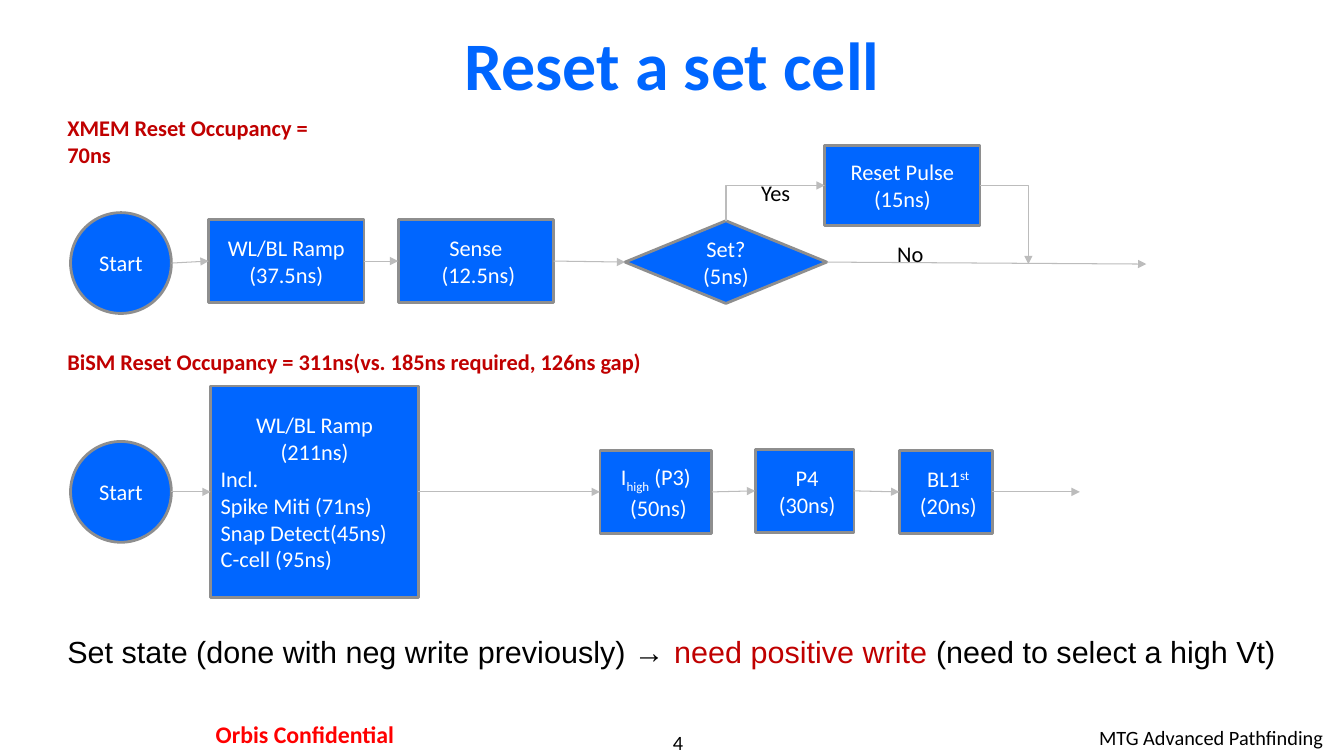
import dataclasses
import typing

import lxml.etree
import pptx
import pptx.dml.color
import pptx.enum.shapes
import pptx.enum.text
import pptx.oxml.ns
import pptx.util

Inches = pptx.util.Inches
Kind = pptx.enum.shapes.MSO_SHAPE
Link = pptx.enum.shapes.MSO_CONNECTOR
Align = pptx.enum.text.PP_ALIGN
Anchor = pptx.enum.text.MSO_ANCHOR
qn = pptx.oxml.ns.qn
LEFT, RIGHT = 1, 3  # connection sites of a box or diamond


@dataclasses.dataclass(frozen=True)
class Theme:
    blue: str = "0066FF"
    edge: str = "8E8E8E"
    wire: str = "BCBCBC"
    dark: str = "C00000"
    red: str = "FF0000"
    black: str = "000000"
    white: str = "FFFFFF"
    font: str = "Calibri"
    plain: str = "Arial"
    title: float = 48.5
    body: float = 16
    note: float = 21.8
    foot: float = 14.5
    mark: float = 17


THEME = Theme()


class Part(typing.NamedTuple):
    text: str
    base: int = 0
    color: str = ""


Line = str | tuple[Part, ...]


class Style(typing.NamedTuple):
    size: float = THEME.body
    color: str = THEME.black
    bold: bool = False
    font: str = THEME.font


class Label(typing.NamedTuple):
    left: float
    top: float
    width: float
    height: float
    line: Line
    style: Style = Style()
    align: Align = Align.LEFT
    wrap: bool = False
    inset: tuple[float, float] = (0.1, 0.05)


class Node(typing.NamedTuple):
    left: float
    top: float
    width: float
    height: float
    lines: tuple[Line, ...]
    kind: Kind = Kind.RECTANGLE
    center: int = 2  # how many leading lines are centred


class Flow(typing.NamedTuple):
    nodes: tuple[Node, ...]
    end: tuple[float, float]


HEAD = Style(color=THEME.dark, bold=True)
FOOT = Style(THEME.foot)
LABELS = (
    Label(5.56, 7.24, 2.33, 0.24, "4", FOOT, Align.CENTER, True, (0, 0)),
    Label(8.83, 7.15, 4.39, 0.35, "MTG Advanced Pathfinding", FOOT, Align.RIGHT, True),
    Label(1.55, 7.08, 2.95, 0.41, "Orbis Confidential",
          Style(THEME.mark, THEME.red, True), Align.CENTER, True, (0.12, 0.06)),
    Label(0.57, 1.08, 2.98, 0.37, "XMEM Reset Occupancy = 70ns", HEAD),
    Label(0.57, 3.4, 5.98, 0.37,
          "BiSM Reset Occupancy = 311ns(vs. 185ns required, 126ns gap)", HEAD),
    Label(0.57, 6.23, 12.34, 0.47,
          (Part("Set state (done with neg write previously) → "),
           Part("need positive write ", color=THEME.dark),
           Part("(need to select a high Vt)")),
          Style(THEME.note, font=THEME.plain)),
    Label(7.45, 1.73, 0.49, 0.37, "Yes"),
    Label(8.8, 2.33, 0.47, 0.37, "No"),
)

PULSE = Node(8.18, 1.44, 1.54, 0.8, ("Reset Pulse (15ns)",))
CHECK = Node(6.2, 2.19, 2, 0.82, ("Set? (5ns)",), Kind.DIAMOND)
FLOWS = (
    Flow((
        Node(0.7, 2.11, 1, 1, ("Start",), Kind.OVAL),
        Node(2.07, 2.18, 1.54, 0.82, ("WL/BL Ramp", "(37.5ns)")),
        Node(3.95, 2.18, 1.54, 0.82, ("Sense", " (12.5ns)")),
        CHECK,
    ), (11.37, 2.62)),
    Flow((
        Node(0.7, 4.38, 1, 1, ("Start",), Kind.OVAL),
        Node(2.09, 3.83, 2.06, 2.1,
             ("WL/BL Ramp", "(211ns)", "Incl.", "Spike Miti (71ns)",
              "Snap Detect(45ns)", "C-cell (95ns)")),
        Node(5.95, 4.47, 1.11, 0.82,
             ((Part("I"), Part("high", -25), Part(" (P3)")), " (50ns)")),
        Node(7.49, 4.46, 0.98, 0.82, (" P4", " (30ns)")),
        Node(8.92, 4.47, 0.92, 0.82, ((Part(" BL1"), Part("st", 30)), " (20ns)")),
    ), (10.71, 4.88)),
)


def rgb(color: str) -> pptx.dml.color.RGBColor:
    return pptx.dml.color.RGBColor.from_string(color)


def write(para, line: Line, style: Style, align: Align) -> None:
    parts = (Part(line),) if isinstance(line, str) else line
    para.alignment = align
    for part in parts:
        run = para.add_run()
        run.text = part.text
        font = run.font
        font.name, font.bold = style.font, style.bold
        font.size = pptx.util.Pt(style.size)
        font.color.rgb = rgb(part.color or style.color)
        if part.base:
            run._r.get_or_add_rPr().set("baseline", str(part.base * 1000))


def add_label(slide, label: Label) -> None:
    box = slide.shapes.add_textbox(*map(Inches, label[:4]))
    frame = box.text_frame
    frame.word_wrap = label.wrap
    side, edge = map(Inches, label.inset)
    frame.margin_left = frame.margin_right = side
    frame.margin_top = frame.margin_bottom = edge
    write(frame.paragraphs[0], label.line, label.style, label.align)


def add_node(slide, node: Node):
    shape = slide.shapes.add_shape(node.kind, *map(Inches, node[:4]))
    shape.shadow.inherit = False
    shape.fill.solid()
    shape.fill.fore_color.rgb = rgb(THEME.blue)
    shape.line.color.rgb = rgb(THEME.edge)
    shape.line.width = pptx.util.Pt(2)
    frame = shape.text_frame
    frame.word_wrap = True
    frame.vertical_anchor = Anchor.MIDDLE
    for rank, line in enumerate(node.lines):
        para = frame.add_paragraph() if rank else frame.paragraphs[0]
        align = Align.CENTER if rank < node.center else Align.LEFT
        write(para, line, Style(color=THEME.white), align)
    return shape


def add_arrow(slide, x: float, y: float, to_x: float, to_y: float, bent: bool = False):
    """Draw an arrow; a bent one runs across, then down."""
    kind = Link.ELBOW if bent else Link.STRAIGHT
    wire = slide.shapes.add_connector(kind, *map(Inches, (x, y, to_x, to_y)))
    wire.line.color.rgb = rgb(THEME.wire)
    wire.line.width = pptx.util.Pt(0.75)
    props = wire._element.spPr
    tail = lxml.etree.SubElement(props.find(qn("a:ln")), qn("a:tailEnd"))
    tail.set("type", "triangle")
    lxml.etree.SubElement(props, qn("a:effectLst"))
    if bent:
        props.find(qn("a:prstGeom")).set("prst", "bentConnector2")
    return wire


def add_rise(slide, x: float, y: float, to_x: float, to_y: float) -> None:
    """Draw an arrow that runs up, then right: a bent one turned by 90 degrees."""
    mid_x, mid_y = (x + to_x) / 2, (y + to_y) / 2
    half_w, half_h = (y - to_y) / 2, (to_x - x) / 2
    wire = add_arrow(slide, mid_x - half_w, mid_y - half_h,
                     mid_x + half_w, mid_y + half_h, True)
    frame = wire._element.spPr.find(qn("a:xfrm"))
    for key, value in (("rot", "5400000"), ("flipH", "1"), ("flipV", "1")):
        frame.set(key, value)


def add_flow(slide, flow: Flow) -> None:
    shapes = [add_node(slide, node) for node in flow.nodes]
    for rank, (node, shape) in enumerate(zip(flow.nodes, shapes)):
        wire = add_arrow(slide, node.left + node.width,
                         node.top + node.height / 2, *flow.end)
        if node.kind != Kind.OVAL:
            wire.begin_connect(shape, RIGHT)
        if rank + 1 < len(shapes):
            wire.end_connect(shapes[rank + 1], LEFT)


def main() -> None:
    deck = pptx.Presentation()
    deck.slide_width, deck.slide_height = Inches(13.33), Inches(7.5)
    slide = deck.slides.add_slide(deck.slide_layouts[5])
    title = slide.shapes.title
    title.left, title.top, title.width, title.height = map(Inches, (1, 0.17, 11.33, 0.92))
    title.text_frame.vertical_anchor = Anchor.MIDDLE
    write(title.text_frame.paragraphs[0], "Reset a set cell",
          Style(THEME.title, THEME.blue, True), Align.CENTER)
    for flow in FLOWS:
        add_flow(slide, flow)
    add_node(slide, PULSE)
    mid = PULSE.top + PULSE.height / 2
    add_rise(slide, CHECK.left + CHECK.width / 2, CHECK.top, PULSE.left, mid)
    add_arrow(slide, PULSE.left + PULSE.width, mid, 10.2, 2.62, True)
    for label in LABELS:
        add_label(slide, label)
    deck.save("out.pptx")


if __name__ == "__main__":
    main()
